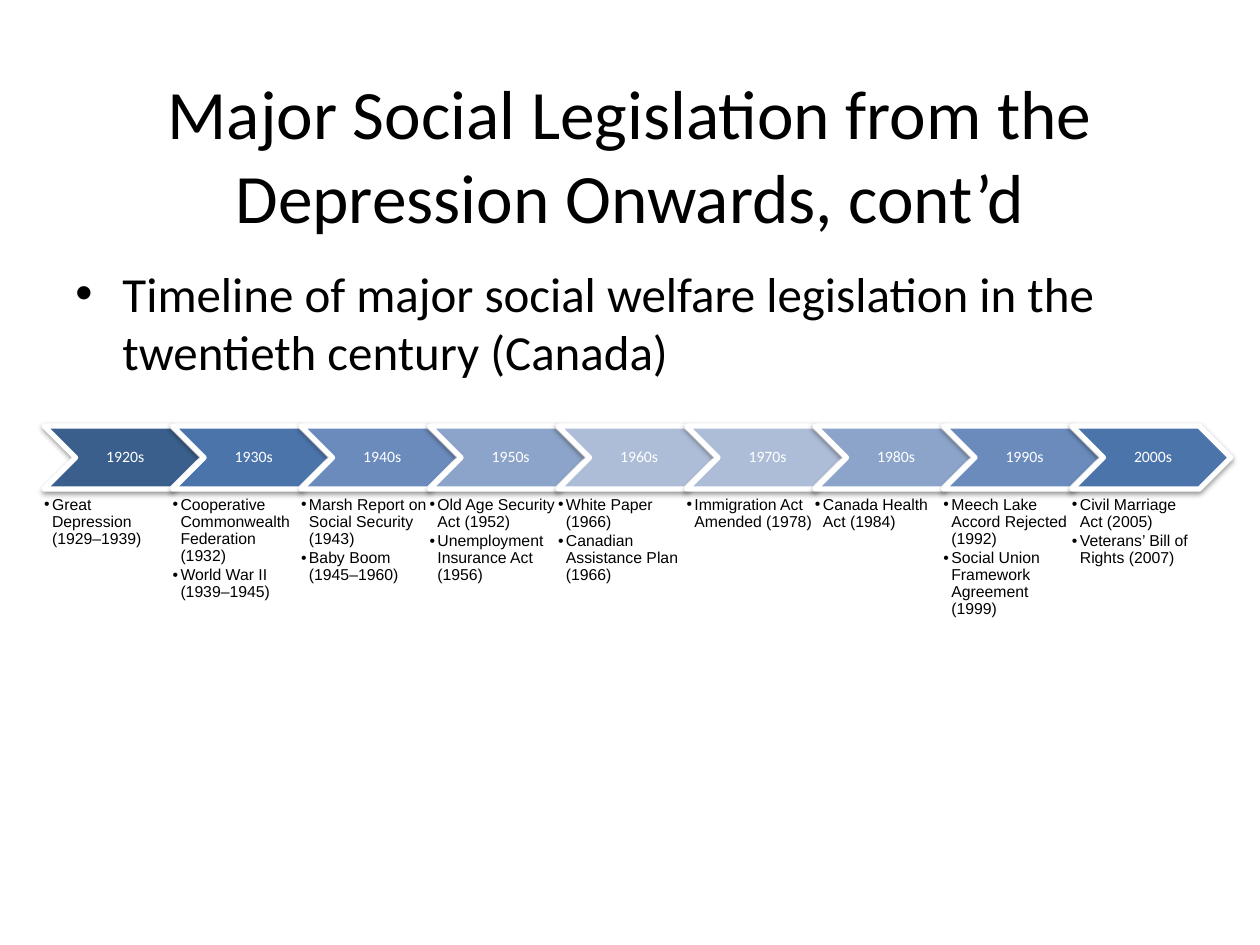
"""Builds a slide with a chevron timeline of Canadian social legislation."""
from lxml import etree
from pptx import Presentation
from pptx import util as u
from pptx.dml.color import RGBColor
from pptx.enum import shapes, text
from pptx.oxml import parse_xml
from pptx.oxml.ns import nsdecls, qn

BLACK = RGBColor(0x00, 0x00, 0x00)
WHITE = RGBColor(0xFF, 0xFF, 0xFF)
NAVY = RGBColor(0x3A, 0x5F, 0x8C)
BLUE = RGBColor(0x4B, 0x74, 0xAB)
MID_BLUE = RGBColor(0x6A, 0x8B, 0xBC)
SOFT_BLUE = RGBColor(0x8C, 0xA4, 0xC9)
PALE_BLUE = RGBColor(0xAE, 0xBD, 0xD7)

DECADES = [
    ("1920s", NAVY, ["Great Depression (1929–1939)"]),
    ("1930s", BLUE, ["Cooperative Commonwealth Federation (1932)",
                     "World War II (1939–1945)"]),
    ("1940s", MID_BLUE, ["Marsh Report on Social Security (1943)",
                         "Baby Boom (1945–1960)"]),
    ("1950s", SOFT_BLUE, ["Old Age Security Act (1952)",
                          "Unemployment Insurance Act (1956)"]),
    ("1960s", PALE_BLUE, ["White Paper (1966)",
                          "Canadian Assistance Plan (1966)"]),
    ("1970s", PALE_BLUE, ["Immigration Act Amended (1978)"]),
    ("1980s", SOFT_BLUE, ["Canada Health Act (1984)"]),
    ("1990s", MID_BLUE, ["Meech Lake Accord Rejected (1992)",
                         "Social Union Framework Agreement (1999)"]),
    ("2000s", BLUE, ["Civil Marriage Act (2005)",
                     "Veterans’ Bill of Rights (2007)"]),
]
TIMELINE_LEFT, DECADE_PITCH = 0.89, 2.59
SHADOW = (
    f'<a:effectLst {nsdecls("a")}>'
    '<a:outerShdw blurRad="39370" dist="20320" dir="5400000" rotWithShape="0">'
    '<a:srgbClr val="000000"><a:alpha val="38000"/></a:srgbClr>'
    '</a:outerShdw></a:effectLst>'
)


def write(paragraph, wording, size, font_name, color):
    run = paragraph.add_run()
    run.text = wording
    run.font.size = u.Pt(size)
    run.font.name = font_name
    run.font.color.rgb = color


def add_bullet(paragraph, indent):
    properties = paragraph._p.get_or_add_pPr()
    properties.set("marL", str(u.Cm(indent)))
    properties.set("indent", str(-u.Cm(indent)))
    etree.SubElement(properties, qn("a:buFont")).set("typeface", "Arial")
    etree.SubElement(properties, qn("a:buChar")).set("char", "•")


presentation = Presentation()
presentation.slide_width = u.Cm(25.4)
presentation.slide_height = u.Cm(19.05)
slide = presentation.slides.add_slide(presentation.slide_layouts[6])

title = slide.shapes.add_textbox(u.Cm(1.27), u.Cm(1.8), u.Cm(22.86), u.Cm(2.6))
title.text_frame.word_wrap = True
title.text_frame.vertical_anchor = text.MSO_ANCHOR.MIDDLE
paragraph = title.text_frame.paragraphs[0]
paragraph.alignment = text.PP_ALIGN.CENTER
write(paragraph, "Major Social Legislation from the Depression Onwards, cont’d",
      39.6, "Calibri", BLACK)

body = slide.shapes.add_textbox(u.Cm(1.27), u.Cm(5.18), u.Cm(22.86), u.Cm(12.09))
body.text_frame.word_wrap = True
paragraph = body.text_frame.paragraphs[0]
add_bullet(paragraph, 0.95)
write(paragraph, "Timeline of major social welfare legislation in the "
      "twentieth century (Canada)", 28, "Calibri", BLACK)

for index, (decade, color, events) in enumerate(DECADES):
    left = u.Cm(TIMELINE_LEFT + index * DECADE_PITCH)

    chevron = slide.shapes.add_shape(
        shapes.MSO_SHAPE.CHEVRON, left, u.Cm(8.59), u.Cm(3.2), u.Cm(1.27))
    chevron.fill.solid()
    chevron.fill.fore_color.rgb = color
    chevron.line.color.rgb = WHITE
    chevron.line.width = u.Pt(3)
    chevron._element.spPr.append(parse_xml(SHADOW))
    frame = chevron.text_frame
    frame.margin_left = u.Cm(0.1)
    frame.margin_right = frame.margin_top = frame.margin_bottom = u.Cm(0.03)
    frame.vertical_anchor = text.MSO_ANCHOR.MIDDLE
    paragraph = frame.paragraphs[0]
    paragraph.alignment = text.PP_ALIGN.CENTER
    paragraph.line_spacing = 0.9
    write(paragraph, decade, 9, "Calibri", WHITE)

    notes = slide.shapes.add_textbox(left, u.Cm(10.01), u.Cm(2.55), u.Cm(2.41))
    frame = notes.text_frame
    frame.word_wrap = True
    frame.margin_left = frame.margin_right = 0
    frame.margin_top = frame.margin_bottom = 0
    for number, event in enumerate(events):
        paragraph = frame.add_paragraph() if number else frame.paragraphs[0]
        add_bullet(paragraph, 0.16)
        paragraph.line_spacing = 0.9
        paragraph.space_after = u.Pt(1.35)
        write(paragraph, event, 9, "Arial", BLACK)

presentation.save("out.pptx")
